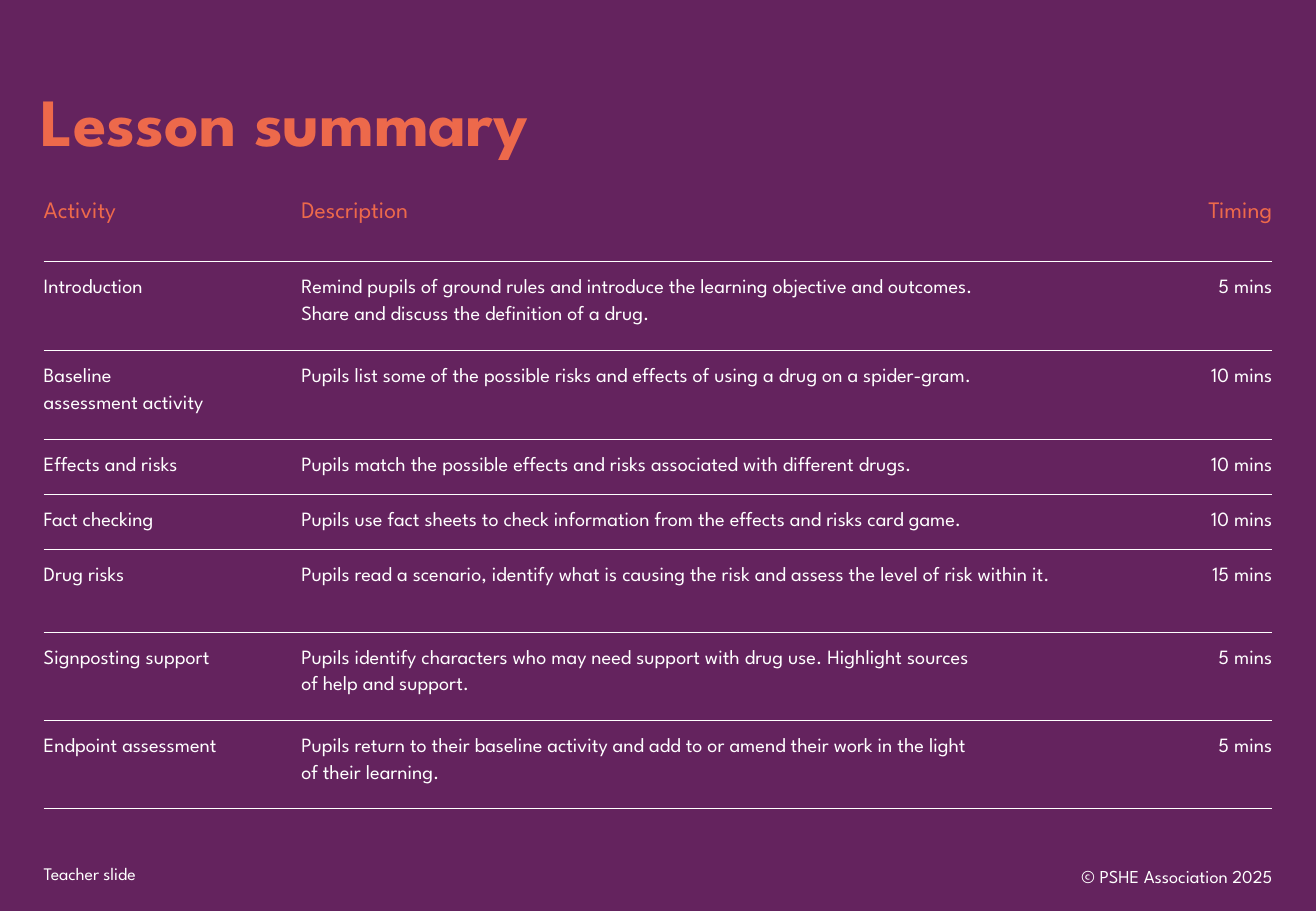
import dataclasses

import lxml.etree
import pptx
import pptx.dml.color
import pptx.enum.text
import pptx.oxml.ns
import pptx.util

Pt = pptx.util.Pt
Align = pptx.enum.text.PP_ALIGN
Anchor = pptx.enum.text.MSO_ANCHOR


@dataclasses.dataclass(frozen=True)
class Theme:
    """Colours, font and type sizes of the slide."""

    background: str = "64235E"
    accent: str = "ED694B"
    text: str = "FFFFFF"
    font: str = "League Spartan"
    title_size: float = 40
    heading_size: float = 14
    body_size: float = 12
    footer_size: float = 10.5
    copyright_size: float = 10.8
    rule_width: float = 0.5
    cell_inset: float = 5.67


THEME = Theme()
COLUMN_WIDTHS = (152.64, 500.4, 74.88)
HEADINGS = ("Activity", "Description", "Timing")
ACTIVITIES = (
    (52.7, "Introduction",
     "Remind pupils of ground rules and introduce the learning objective and outcomes.\n"
     "Share and discuss the definition of a drug.", "5 mins"),
    (52.7, "Baseline\nassessment activity",
     "Pupils list some of the possible risks and effects of using a drug on a spider-gram.",
     "10 mins"),
    (32.6, "Effects and risks",
     "Pupils match the possible effects and risks associated with different drugs.", "10 mins"),
    (32.6, "Fact checking",
     "Pupils use fact sheets to check information from the effects and risks card game.",
     "10 mins"),
    (49.1, "Drug risks",
     "Pupils read a scenario, identify what is causing the risk and assess the level of risk"
     " within it.", "15 mins"),
    (52.4, "Signposting support",
     "Pupils identify characters who may need support with drug use. Highlight sources\n"
     "of help and support.", "5 mins"),
    (52.4, "Endpoint assessment",
     "Pupils return to their baseline activity and add to or amend their work in the light\n"
     "of their learning.", "5 mins"),
)


def write_text(text_frame, text, *, size, color=THEME.text, bold=False,
               align=Align.LEFT, line_spacing=None):
    """Write one formatted paragraph, turning newlines into line breaks."""
    paragraph = text_frame.paragraphs[0]
    paragraph.text = text.replace("\n", "\v")
    paragraph.alignment = align
    paragraph.line_spacing = line_spacing
    for run in paragraph.runs:
        run.font.name = THEME.font
        run.font.size = Pt(size)
        run.font.bold = bold
        run.font.color.rgb = pptx.dml.color.RGBColor.from_string(color)


def set_rules(cell, top):
    """Draw the horizontal rules of a cell and hide its vertical borders."""
    qn = pptx.oxml.ns.qn
    properties = cell._tc.get_or_add_tcPr()
    for side, visible in (("L", False), ("R", False), ("T", top), ("B", True)):
        line = lxml.etree.SubElement(properties, qn(f"a:ln{side}"), w=str(Pt(THEME.rule_width)))
        if visible:
            fill = lxml.etree.SubElement(line, qn("a:solidFill"))
            lxml.etree.SubElement(fill, qn("a:srgbClr"), val=THEME.text)
        else:
            lxml.etree.SubElement(line, qn("a:noFill"))


def add_title(slide, left, top, width, height):
    """Place the slide title in the title placeholder."""
    title = slide.shapes.title
    title.left, title.top, title.width, title.height = map(Pt, (left, top, width, height))
    title.text_frame.vertical_anchor = Anchor.MIDDLE
    write_text(title.text_frame, "Lesson summary", size=THEME.title_size,
               color=THEME.accent, bold=True, line_spacing=0.9)


def add_activity_table(slide, left, top, heading_height):
    """Place the table of activities with its top left corner at the given point."""
    rows = ((heading_height, *HEADINGS), *ACTIVITIES)
    height = sum(row[0] for row in rows)
    table = slide.shapes.add_table(
        len(rows), len(HEADINGS), Pt(left), Pt(top), Pt(sum(COLUMN_WIDTHS)), Pt(height)).table
    table.first_row = table.horz_banding = False
    for column, width in zip(table.columns, COLUMN_WIDTHS):
        column.width = Pt(width)
    for row_index, (row_height, *texts) in enumerate(rows):
        is_heading = row_index == 0
        table.rows[row_index].height = Pt(row_height)
        for column_index, text in enumerate(texts):
            is_last = column_index == len(texts) - 1
            cell = table.cell(row_index, column_index)
            set_rules(cell, top=not is_heading)
            cell.fill.background()
            cell.margin_top = cell.margin_bottom = Pt(THEME.cell_inset)
            cell.margin_left = Pt(THEME.cell_inset if is_last else 0)
            cell.margin_right = Pt(0 if is_last else THEME.cell_inset)
            cell.vertical_anchor = Anchor.MIDDLE if is_heading else Anchor.TOP
            write_text(cell.text_frame, text,
                       size=THEME.heading_size if is_heading else THEME.body_size,
                       color=THEME.accent if is_heading else THEME.text,
                       align=Align.RIGHT if is_last else Align.LEFT,
                       line_spacing=None if is_heading else Pt(16))


def add_footer_text(slide, left, top, width, height, text, *, size, align, anchor):
    """Place one footer text in the given box."""
    box = slide.shapes.add_textbox(*map(Pt, (left, top, width, height)))
    box.text_frame.word_wrap = True
    box.text_frame.vertical_anchor = anchor
    write_text(box.text_frame, text, size=size, align=align)


def main():
    """Build and save the lesson summary slide."""
    presentation = pptx.Presentation()
    presentation.slide_width, presentation.slide_height = Pt(779.76), Pt(540)
    slide = presentation.slides.add_slide(presentation.slide_layouts.get_by_name("Title Only"))
    slide.background.fill.solid()
    slide.background.fill.fore_color.rgb = pptx.dml.color.RGBColor.from_string(THEME.background)
    add_footer_text(slide, 18.72, 507.6, 488.16, 20.88, "Teacher slide",
                    size=THEME.footer_size, align=Align.LEFT, anchor=Anchor.TOP)
    add_title(slide, 16.56, 46.8, 590.4, 54.72)
    add_activity_table(slide, 25.92, 97.9, heading_height=57)
    add_footer_text(slide, 585.36, 504.72, 175.68, 28.8, "© PSHE Association 2025",
                    size=THEME.copyright_size, align=Align.RIGHT, anchor=Anchor.MIDDLE)
    presentation.save("out.pptx")


if __name__ == "__main__":
    main()
